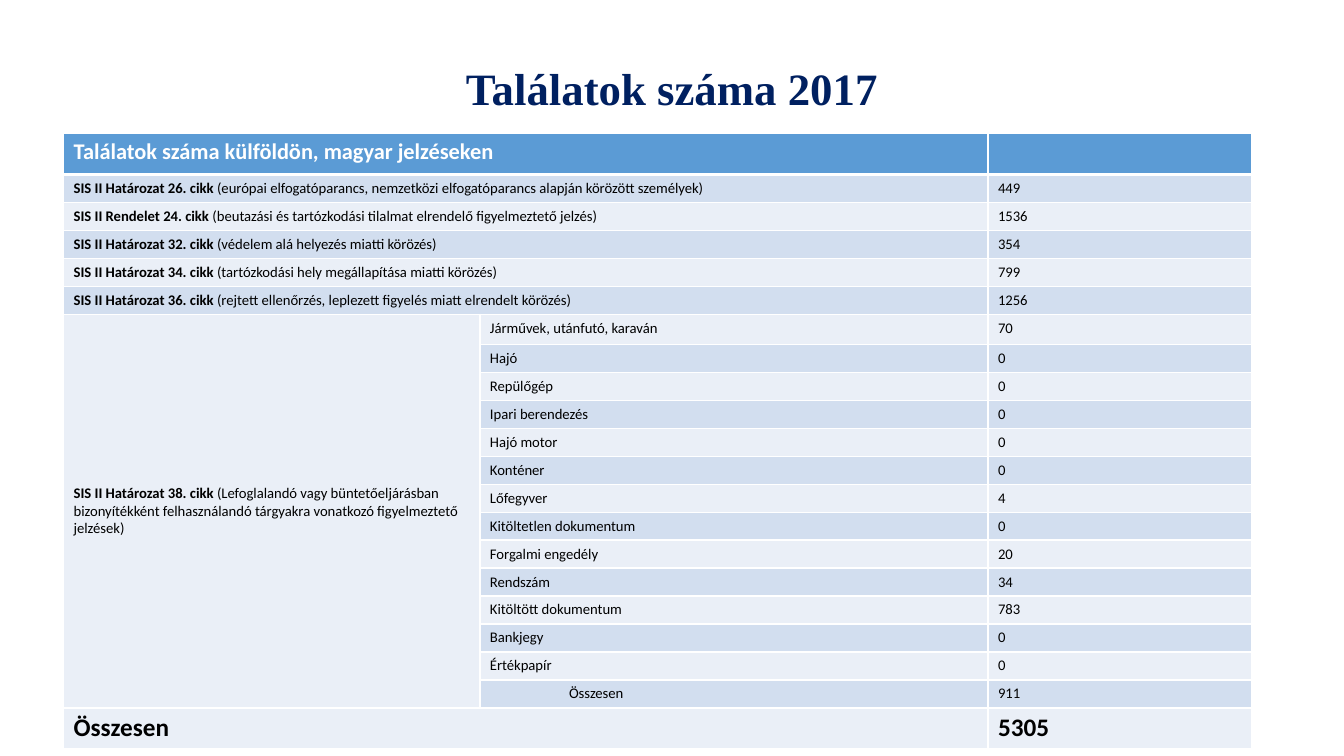
from dataclasses import dataclass

from lxml import etree
from pptx import Presentation
from pptx.dml.color import RGBColor
from pptx.enum import text
from pptx.oxml import ns
from pptx.util import Pt

COLORS = {
    "navy": "002060",
    "header": "5B9BD5",
    "band_dark": "D2DEEF",
    "band_light": "EAEFF7",
    "white": "FFFFFF",
    "black": "000000",
}
COLUMN_WIDTHS = [297.4, 362.9, 188.6]
HEADER_HEIGHT, FIRST_OBJECT_HEIGHT, ROW_HEIGHT, TOTAL_HEIGHT = 29.6, 21.4, 20, 29.2


@dataclass
class Style:
    size: float = 10.5
    color: str = "black"
    bold: bool = False
    font: str = "Calibri"


@dataclass
class Article:
    name: str
    detail: str
    hits: str = ""


@dataclass
class ObjectHits:
    name: str
    hits: str
    indent: float = 0


PLAIN, STRONG = Style(), Style(bold=True)
HEADING = Style(16, "white", True)
TOTAL = Style(18, "black", True)
TITLE = Style(32, "navy", True, "Times New Roman")

ARTICLES = [
    Article("SIS II Határozat 26. cikk",
            " (európai elfogatóparancs, nemzetközi elfogatóparancs alapján körözött személyek)", "449"),
    Article("SIS II Rendelet 24. cikk",
            " (beutazási és tartózkodási tilalmat elrendelő figyelmeztető jelzés)", "1536"),
    Article("SIS II Határozat 32. cikk", " (védelem alá helyezés miatti körözés)", "354"),
    Article("SIS II Határozat 34. cikk", " (tartózkodási hely megállapítása miatti körözés)", "799"),
    Article("SIS II Határozat 36. cikk",
            " (rejtett ellenőrzés, leplezett figyelés miatt elrendelt körözés)", "1256"),
]
OBJECT_ARTICLE = Article(
    "SIS II Határozat 38. cikk",
    " (Lefoglalandó vagy büntetőeljárásban bizonyítékként felhasználandó tárgyakra"
    " vonatkozó figyelmeztető jelzések)")
OBJECTS = [
    ObjectHits("Járművek, utánfutó, karaván", "70"),
    ObjectHits("Hajó", "0"),
    ObjectHits("Repülőgép", "0"),
    ObjectHits("Ipari berendezés", "0"),
    ObjectHits("Hajó motor", "0"),
    ObjectHits("Konténer", "0"),
    ObjectHits("Lőfegyver", "4"),
    ObjectHits("Kitöltetlen dokumentum", "0"),
    ObjectHits("Forgalmi engedély", "20"),
    ObjectHits("Rendszám", "34"),
    ObjectHits("Kitöltött dokumentum", "783"),
    ObjectHits("Bankjegy", "0"),
    ObjectHits("Értékpapír", "0"),
    ObjectHits("Összesen", "911", indent=56.5),
]


def add_run(paragraph, words: str, style: Style) -> None:
    run = paragraph.add_run()
    run.text = words
    run.font.size = Pt(style.size)
    run.font.name = style.font
    run.font.bold = style.bold
    run.font.color.rgb = RGBColor.from_string(COLORS[style.color])


def write(cell, *runs: tuple[str, Style]) -> None:
    for words, style in runs:
        add_run(cell.text_frame.paragraphs[0], words, style)


def write_article(cell, article: Article) -> None:
    write(cell, (article.name, STRONG), (article.detail, PLAIN))


def add_borders(cell, top: float, bottom: float) -> None:
    properties = cell._tc.get_or_add_tcPr()
    for side, width in (("L", 1), ("R", 1), ("T", top), ("B", bottom)):
        line = etree.SubElement(properties, ns.qn(f"a:ln{side}"), w=str(Pt(width)))
        fill = etree.SubElement(line, ns.qn("a:solidFill"))
        etree.SubElement(fill, ns.qn("a:srgbClr"), val=COLORS["white"])


def style_cell(cell, row: int) -> None:
    add_borders(cell, top=3 if row == 1 else 1, bottom=3 if row == 0 else 1)
    band = "header" if row == 0 else "band_dark" if row % 2 else "band_light"
    cell.fill.solid()
    cell.fill.fore_color.rgb = RGBColor.from_string(COLORS[band])
    # Empty cells get small text so that they never stretch their row
    if not cell.text_frame.text:
        etree.SubElement(cell.text_frame.paragraphs[0]._p, ns.qn("a:endParaRPr"), sz="1050")


def add_title(slide) -> None:
    title = slide.shapes.add_textbox(Pt(66), Pt(28.8), Pt(828), Pt(72.7)).text_frame
    title.word_wrap = True
    title.vertical_anchor = text.MSO_ANCHOR.MIDDLE
    paragraph = title.paragraphs[0]
    paragraph.alignment = text.PP_ALIGN.CENTER
    paragraph.line_spacing = 0.9
    add_run(paragraph, "Találatok száma 2017", TITLE)


def add_hits_table(slide) -> None:
    heights = [HEADER_HEIGHT, *[ROW_HEIGHT] * len(ARTICLES), FIRST_OBJECT_HEIGHT,
               *[ROW_HEIGHT] * (len(OBJECTS) - 1), TOTAL_HEIGHT]
    hits = slide.shapes.add_table(len(heights), len(COLUMN_WIDTHS), Pt(45.4), Pt(95),
                                  Pt(sum(COLUMN_WIDTHS)), Pt(sum(heights))).table
    hits.first_row = hits.horz_banding = False
    for column, width in zip(hits.columns, COLUMN_WIDTHS):
        column.width = Pt(width)
    for row, height in zip(hits.rows, heights):
        row.height = Pt(height)

    # Merged areas
    first_object = len(ARTICLES) + 1
    total = len(heights) - 1
    for row in [*range(first_object), total]:
        hits.cell(row, 0).merge(hits.cell(row, 1))
    hits.cell(first_object, 0).merge(hits.cell(total - 1, 0))

    # Header and articles on persons
    write(hits.cell(0, 0), ("Találatok száma külföldön, magyar jelzéseken", HEADING))
    for row, article in enumerate(ARTICLES, start=1):
        write_article(hits.cell(row, 0), article)
        write(hits.cell(row, 2), (article.hits, PLAIN))

    # Article on objects
    write_article(hits.cell(first_object, 0), OBJECT_ARTICLE)
    hits.cell(first_object, 0).vertical_anchor = text.MSO_ANCHOR.MIDDLE
    for row, item in enumerate(OBJECTS, start=first_object):
        name = hits.cell(row, 1)
        write(name, (item.name, PLAIN))
        if item.indent:
            name.text_frame.paragraphs[0]._p.get_or_add_pPr().set("marL", str(Pt(item.indent)))
        write(hits.cell(row, 2), (item.hits, PLAIN))

    # Grand total
    write(hits.cell(total, 0), ("Összesen", TOTAL))
    write(hits.cell(total, 2), ("5305", TOTAL))

    for row in range(len(heights)):
        for column in range(len(COLUMN_WIDTHS)):
            style_cell(hits.cell(row, column), row)


def main() -> None:
    deck = Presentation()
    deck.slide_width, deck.slide_height = Pt(960), Pt(540)
    slide = deck.slides.add_slide(deck.slide_layouts[6])
    add_title(slide)
    add_hits_table(slide)
    deck.save("out.pptx")


if __name__ == "__main__":
    main()
